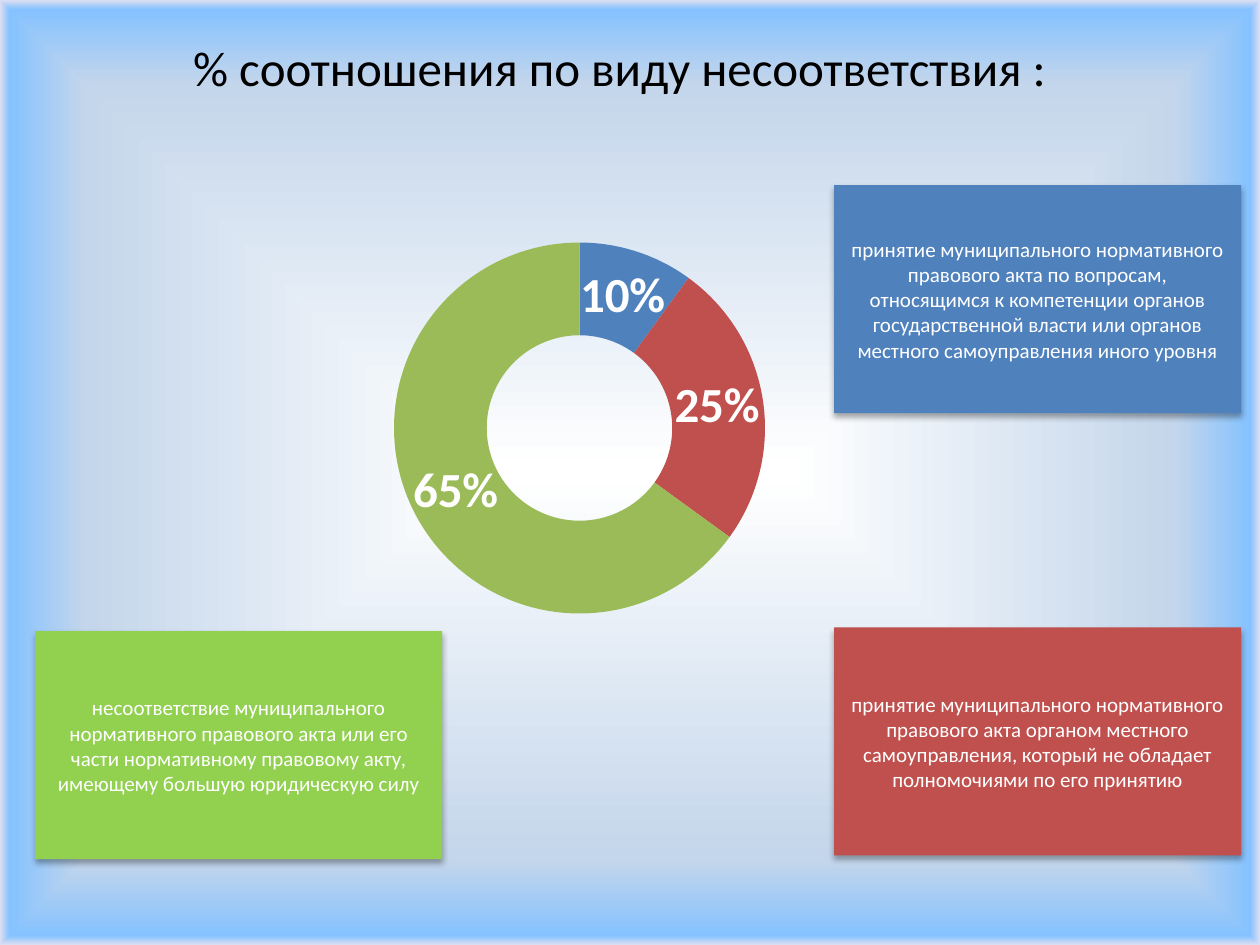
from dataclasses import dataclass

from pptx import Presentation
from pptx.chart.data import CategoryChartData as ChartData
from pptx.dml.color import RGBColor as RGB
from pptx.enum.chart import XL_CHART_TYPE as ChartType
from pptx.enum.shapes import MSO_SHAPE as Shape
from pptx.enum.text import MSO_ANCHOR as Anchor, PP_ALIGN as Align
from pptx.oxml import parse_xml
from pptx.oxml.ns import nsdecls
from pptx.util import Inches, Pt


@dataclass(frozen=True)
class Theme:
    """Colours and type sizes of the slide."""
    font: str = "Calibri"
    ink: str = "000000"
    light: str = "FFFFFF"
    blue: str = "4F81BD"
    red: str = "C0504D"
    green: str = "9BBB59"
    lime: str = "92D050"
    back: tuple = ((0, "FFFFFF"), (82, "C4D6EB"), (98, "85C2FF"),
                   (100, "DEDFF2"), (100, "FFEBFA"))
    large: int = 28
    small: int = 12
    tiny: int = 10


THEME = Theme()
TITLE = "% соотношения по виду несоответствия :"
SHARES = ((0.1, THEME.blue), (0.25, THEME.red), (0.65, THEME.green))
SIZE = (3.23, 1.81)
LEFT, RIGHT = 0.28, 6.62
NOTES = (
    (RIGHT, 1.47, THEME.blue,
     "принятие муниципального нормативного правового акта по вопросам, "
     "относящимся к компетенции органов государственной власти или органов "
     "местного самоуправления иного уровня"),
    (RIGHT, 4.98, THEME.red,
     "принятие муниципального нормативного правового акта органом местного "
     "самоуправления, который не обладает полномочиями по его принятию"),
    (LEFT, 5.01, THEME.lime,
     "несоответствие муниципального нормативного правового акта или его части "
     "нормативному правовому акту, имеющему большую юридическую силу"),
)


def style(font, size, color, bold=False):
    """Set the face, size, colour and weight of a font."""
    font.name, font.size, font.bold = THEME.font, Pt(size), bold
    font.color.rgb = RGB.from_string(color)


def write(shape, text, size, color):
    """Put centred text in a shape."""
    frame = shape.text_frame
    frame.word_wrap = True
    frame.vertical_anchor = Anchor.MIDDLE
    frame.text = text
    line = frame.paragraphs[0]
    line.alignment = Align.CENTER
    style(line.runs[0].font, size, color)


def paint_back(slide):
    """Fill the background with a gradient from the centre to the edges."""
    slide.background.fill.gradient()
    grad = slide.element.xpath(".//a:gradFill")[0]
    stops = "".join(
        f'<a:gs pos="{pos * 1000}"><a:srgbClr val="{color}"/></a:gs>'
        for pos, color in THEME.back)
    fresh = parse_xml(
        f'<a:gradFill {nsdecls("a")} rotWithShape="1"><a:gsLst>{stops}</a:gsLst>'
        '<a:path path="shape"><a:fillToRect l="50000" t="50000" r="50000" '
        'b="50000"/></a:path></a:gradFill>')
    grad.getparent().replace(grad, fresh)


def add_title(slide, box):
    """Add the heading within the box."""
    write(slide.shapes.add_textbox(*map(Inches, box)), TITLE, THEME.large, THEME.ink)


def add_ring(slide, box):
    """Add the doughnut chart of shares within the box."""
    data = ChartData(number_format="0%")
    data.categories = [str(num + 1) for num in range(len(SHARES))]
    data.add_series("Series 1", [share for share, _ in SHARES])
    chart = slide.shapes.add_chart(ChartType.DOUGHNUT, *map(Inches, box), data).chart
    chart.has_title = chart.has_legend = False
    style(chart.font, THEME.tiny, THEME.ink)
    plot = chart.plots[0]
    for num, (_, color) in enumerate(SHARES):
        form = plot.series[0].points[num].format
        form.fill.solid()
        form.fill.fore_color.rgb = RGB.from_string(color)
        form.line.fill.background()
    plot.has_data_labels = True
    tags = plot.data_labels
    tags.show_value, tags.show_percentage = True, False
    tags.number_format, tags.number_format_is_linked = "0%", False
    style(tags.font, THEME.large, THEME.light, True)
    area = chart.element.xpath(".//c:plotArea")[0]
    for old in area.xpath("./c:layout"):
        area.remove(old)
    spots = "".join(f'<c:{key} val="{val}"/>' for key, val in (
        ("layoutTarget", "inner"), ("xMode", "edge"), ("yMode", "edge"),
        ("x", 0.08), ("y", 0.11), ("w", 0.72), ("h", 0.8)))
    area.insert(0, parse_xml(
        f'<c:layout {nsdecls("c")}><c:manualLayout>{spots}</c:manualLayout></c:layout>'))


def add_note(slide, box, color, text):
    """Add a coloured note with a soft shadow within the box."""
    note = slide.shapes.add_shape(Shape.RECTANGLE, *map(Inches, box))
    note.fill.solid()
    note.fill.fore_color.rgb = RGB.from_string(color)
    note.line.fill.background()
    note.shadow.inherit = False
    note.element.spPr.xpath("./a:effectLst")[0].append(parse_xml(
        f'<a:outerShdw {nsdecls("a")} blurRad="{Pt(3.5)}" dist="{Pt(2.2)}" '
        f'dir="5400000" algn="ctr" rotWithShape="0"><a:srgbClr val="{THEME.ink}">'
        '<a:alpha val="32000"/></a:srgbClr></a:outerShdw>'))
    write(note, text, THEME.small, THEME.light)


def main():
    """Build the slide and save it."""
    deck = Presentation()
    deck.slide_width, deck.slide_height = Inches(10), Inches(7.5)
    slide = deck.slides.add_slide(deck.slide_layouts[6])
    paint_back(slide)
    add_title(slide, (LEFT, 0.21, 9.27, 0.64))
    add_ring(slide, (2.8, 1.47, 4.09, 3.78))
    for left, top, color, text in NOTES:
        add_note(slide, (left, top, *SIZE), color, text)
    deck.save("out.pptx")


if __name__ == "__main__":
    main()
